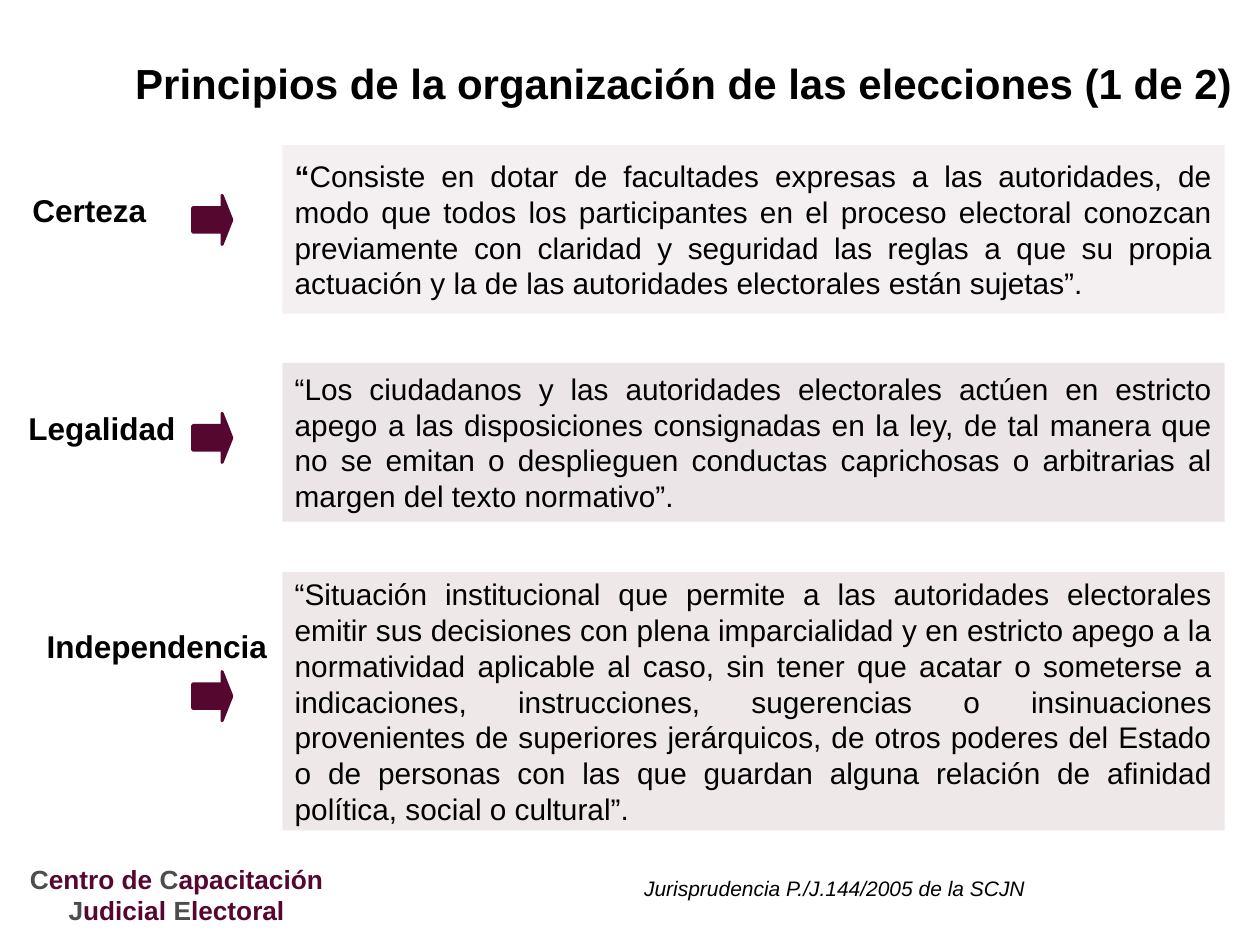
from typing import NamedTuple

from pptx import Presentation
from pptx.dml.color import RGBColor
from pptx.enum.shapes import MSO_SHAPE as Shape
from pptx.enum.text import MSO_ANCHOR as Anchor, PP_ALIGN as Align
from pptx.oxml.ns import qn
from pptx.oxml.xmlchemy import OxmlElement
from pptx.util import Inches, Pt

BLACK, WINE, GRAY = "000000", "560730", "4D4D4D"
ARROW, PANEL = "56072F", "885E6A"


class Run(NamedTuple):
    text: str
    size: float
    bold: bool = False
    italic: bool = False
    color: str = BLACK


class Box(NamedTuple):
    left: float
    top: float
    width: float
    height: float

    def place(self) -> list:
        return [Inches(n) for n in self]


class Rule(NamedTuple):
    """One principle: its label, arrow and shaded definition."""
    name: str
    label: Box
    arrow: Box
    panel: Box
    alpha: int
    runs: list


def rgb(code: str) -> RGBColor:
    return RGBColor.from_string(code)


def add_runs(para, runs: list, align) -> None:
    para.alignment = align
    for item in runs:
        run = para.add_run()
        run.text = item.text
        font = run.font
        font.name, font.size = "Arial", Pt(item.size)
        font.bold, font.italic = item.bold, item.italic
        font.color.rgb = rgb(item.color)


def set_frame(frame, wrap: bool, anchor, pad_x: float = 0.1, pad_y: float = 0.05) -> None:
    frame.word_wrap = wrap
    frame.vertical_anchor = anchor
    frame.margin_left = frame.margin_right = Inches(pad_x)
    frame.margin_top = frame.margin_bottom = Inches(pad_y)


def add_text(slide, box: Box, runs: list) -> None:
    frame = slide.shapes.add_textbox(*box.place()).text_frame
    set_frame(frame, False, Anchor.TOP)
    add_runs(frame.paragraphs[0], runs, Align.CENTER)


def add_arrow(slide, box: Box) -> None:
    arrow = slide.shapes.add_shape(Shape.RIGHT_ARROW, *box.place())
    arrow.shadow.inherit = False
    arrow.adjustments[0], arrow.adjustments[1] = 0.5, 0.25
    arrow.fill.solid()
    arrow.fill.fore_color.rgb = rgb(ARROW)
    arrow.line.color.rgb = rgb(ARROW)
    arrow.line.width = Pt(1.75)


def add_panel(slide, box: Box, alpha: int, runs: list) -> None:
    panel = slide.shapes.add_shape(Shape.RECTANGLE, *box.place())
    panel.shadow.inherit = False
    panel.line.fill.background()
    panel.fill.solid()
    panel.fill.fore_color.rgb = rgb(PANEL)
    tint = OxmlElement("a:alpha")
    tint.set("val", str(alpha * 1000))
    next(panel._element.spPr.iter(qn("a:srgbClr"))).append(tint)
    set_frame(panel.text_frame, True, Anchor.MIDDLE)
    add_runs(panel.text_frame.paragraphs[0], runs, Align.JUSTIFY)


def add_title(slide, box: Box, text: str) -> None:
    title = slide.shapes.title
    title.left, title.top, title.width, title.height = box.place()
    set_frame(title.text_frame, True, Anchor.MIDDLE)
    add_runs(title.text_frame.paragraphs[0], [Run(text, 24, True)], Align.RIGHT)


def add_sign(slide, box: Box, lines: list) -> None:
    """Write the centre's name with gray initials."""
    frame = slide.shapes.add_textbox(*box.place()).text_frame
    set_frame(frame, True, Anchor.TOP, 0, 0)
    for i, words in enumerate(lines):
        para = frame.paragraphs[0] if i == 0 else frame.add_paragraph()
        para.line_spacing = 0.96
        runs = []
        for word in words:
            runs += [Run(word[0], 15, True, color=GRAY),
                     Run(word[1:], 15, True, color=WINE)]
        add_runs(para, runs, Align.CENTER)


RULES = [
    Rule("Certeza", Box(0.16, 1.47, 1.1, 0.4), Box(1.53, 1.55, 0.31, 0.39),
         Box(2.24, 1.15, 7.48, 1.34), 9,
         [Run("“", 17, True),
          Run("Consiste en dotar de facultades expresas a las autoridades, de modo "
              "que todos los participantes en el proceso electoral conozcan "
              "previamente con claridad y seguridad las reglas a que su propia "
              "actuación y la de las autoridades electorales están sujetas”.", 17)]),
    Rule("Legalidad", Box(0.11, 3.2, 1.4, 0.4), Box(1.53, 3.28, 0.31, 0.39),
         Box(2.24, 2.88, 7.48, 1.26), 16,
         [Run("“Los ciudadanos y las autoridades electorales actúen en estricto "
              "apego a las disposiciones consignadas en la ley, de tal manera que "
              "no se emitan o desplieguen conductas caprichosas o arbitrarias al "
              "margen del texto normativo”.", 17)]),
    Rule("Independencia", Box(0.27, 4.93, 1.95, 0.4), Box(1.53, 5.33, 0.31, 0.39),
         Box(2.24, 4.54, 7.48, 2.05), 14,
         [Run("“Situación institucional que permite a las autoridades electorales "
              "emitir sus decisiones con plena imparcialidad y en estricto apego a "
              "la normatividad aplicable al caso, sin tener que acatar o someterse "
              "a indicaciones, instrucciones, sugerencias o insinuaciones "
              "provenientes de superiores jerárquicos, de otros poderes del Estado "
              "o de personas con las que guardan alguna relación de afinidad "
              "política, social o cultural”.", 17)]),
]


def main() -> None:
    deck = Presentation()
    deck.slide_width, deck.slide_height = Inches(10), Inches(7.5)
    slide = deck.slides.add_slide(deck.slide_layouts[5])
    add_title(slide, Box(0.9, 0.41, 8.98, 0.5),
              "Principios de la organización de las elecciones (1 de 2)")
    for rule in RULES:
        add_panel(slide, rule.panel, rule.alpha, rule.runs)
        add_text(slide, rule.label, [Run(rule.name, 18, True)])
        add_arrow(slide, rule.arrow)
    add_sign(slide, Box(0.09, 6.87, 2.62, 0.48),
             [["Centro de ", "Capacitación"], ["Judicial ", "Electoral"]])
    add_text(slide, Box(5, 6.9, 3.25, 0.3),
             [Run("Jurisprudencia P./J.144/2005 de la SCJN", 12, italic=True)])
    deck.save("out.pptx")


if __name__ == "__main__":
    main()
